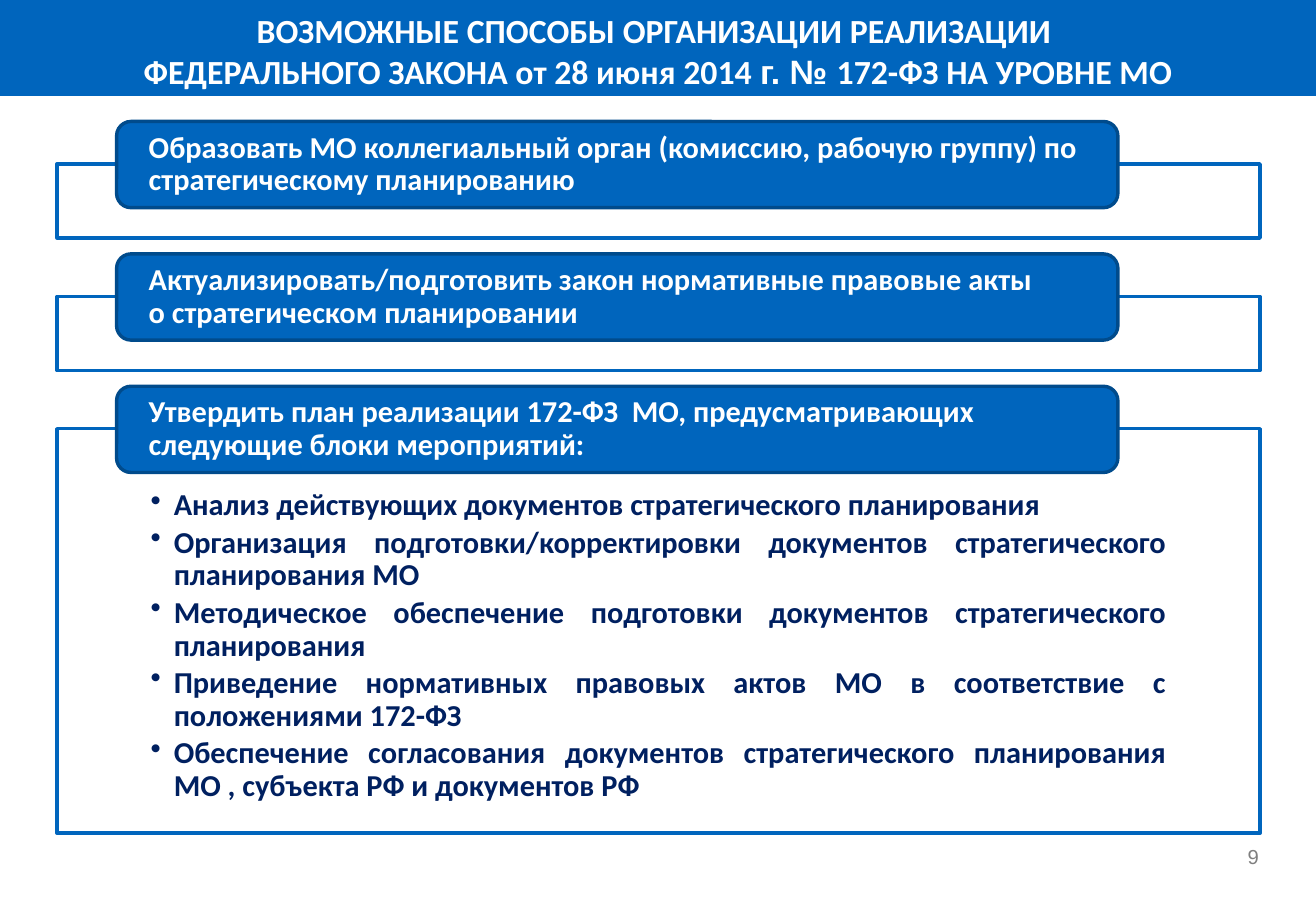
import pptx
import pptx.util
import pptx.dml.color
import pptx.enum.shapes
import pptx.enum.text
import pptx.oxml.ns
from lxml import etree

Inches = pptx.util.Inches
Pt = pptx.util.Pt
Align = pptx.enum.text.PP_ALIGN
Anchor = pptx.enum.text.MSO_ANCHOR
Kind = pptx.enum.shapes.MSO_SHAPE

colors = {"blue": "0065BD", "edge": "004B8C", "navy": "002060",
          "white": "FFFFFF", "gray": "7F7F7F"}


def paint(part, name):
    part.rgb = pptx.dml.color.RGBColor.from_string(colors[name])


def write(shape, text, size=18, color="white", font="Calibri", alt="Arial", bold=True,
          align=Align.LEFT, anchor=Anchor.MIDDLE, inset=(0, 0, 0, 0),
          line=1, after=0, bullet=False):
    frame = shape.text_frame
    frame.word_wrap = True
    frame.vertical_anchor = anchor
    frame.margin_left, frame.margin_top, frame.margin_right, frame.margin_bottom = map(Inches, inset)
    for i, words in enumerate(text.split("\n")):
        para = frame.add_paragraph() if i else frame.paragraphs[0]
        para.alignment = align
        para.line_spacing = line
        para.space_after = Pt(after)
        if bullet:
            props = para._p.get_or_add_pPr()
            props.set("marL", str(Inches(0.19)))
            props.set("indent", str(-Inches(0.19)))
            mark = etree.SubElement(props, pptx.oxml.ns.qn("a:buChar"))
            mark.set("char", "•")
        for j, row in enumerate(words.split("\v")):
            if j:
                para.add_line_break()
            for k, bit in enumerate(row.split("|")):
                run = para.add_run()
                run.text = bit
                run.font.name = alt if k % 2 else font
                run.font.size = Pt(size)
                run.font.bold = bold
                paint(run.font.color, color)


deck = pptx.Presentation()
deck.slide_width = Inches(10.83)
deck.slide_height = Inches(7.5)
slide = deck.slides.add_slide(deck.slide_layouts[6])
shapes = slide.shapes

title = shapes.add_shape(Kind.RECTANGLE, 0, 0, deck.slide_width, Inches(0.79))
title.shadow.inherit = False
title.fill.solid()
paint(title.fill.fore_color, "blue")
title.line.fill.background()
write(title, "ВОЗМОЖНЫЕ СПОСОБЫ ОРГАНИЗАЦИИ РЕАЛИЗАЦИИ \n"
      "ФЕДЕРАЛЬНОГО ЗАКОНА от 28 июня 2014 |г. № |172-ФЗ НА УРОВНЕ МО",
      size=20, align=Align.CENTER, inset=(0.1, 0.04, 0.1, 0))

tasks = "\n".join([
    "Анализ действующих документов стратегического планирования",
    "Организация подготовки/корректировки документов стратегического планирования МО",
    "Методическое обеспечение подготовки документов стратегического планирования",
    "Приведение нормативных правовых актов МО в соответствие с положениями 172-ФЗ",
    "Обеспечение согласования документов стратегического планирования МО , субъекта РФ и документов РФ",
])
steps = [
    ("Образовать МО коллегиальный орган (комиссию, рабочую группу) по стратегическому планированию", 0.61, ""),
    ("Актуализировать/подготовить закон нормативные правовые акты \vо стратегическом планировании", 0.61, ""),
    ("Утвердить план реализации 172-ФЗ  МО, предусматривающих следующие блоки мероприятий:", 3.33, tasks),
]

for i, (head, height, body) in enumerate(steps):
    top = 1 + 1.09 * i
    box = shapes.add_shape(Kind.RECTANGLE, Inches(0.47), Inches(top + 0.35), Inches(9.9), Inches(height))
    box.shadow.inherit = False
    box.fill.background()
    box.line.width = Pt(2)
    paint(box.line.color, "blue")
    if body:
        write(box, body, color="navy", align=Align.JUSTIFY, anchor=Anchor.TOP,
              inset=(0.77, 0.5, 0.77, 0.14), line=0.9, after=2.7, bullet=True)
    card = shapes.add_shape(Kind.ROUNDED_RECTANGLE, Inches(0.96), Inches(top), Inches(8.24), Inches(0.71))
    card.shadow.inherit = False
    card.fill.solid()
    paint(card.fill.fore_color, "blue")
    card.line.width = Pt(2)
    paint(card.line.color, "edge")
    write(card, head, inset=(0.23, 0, 0.23, 0), line=0.9)

page = shapes.add_textbox(Inches(9.84), Inches(6.98), Inches(0.52), Inches(0.14))
write(page, "9", size=12, color="gray", font="Arial", bold=False, align=Align.RIGHT)

deck.save("out.pptx")
